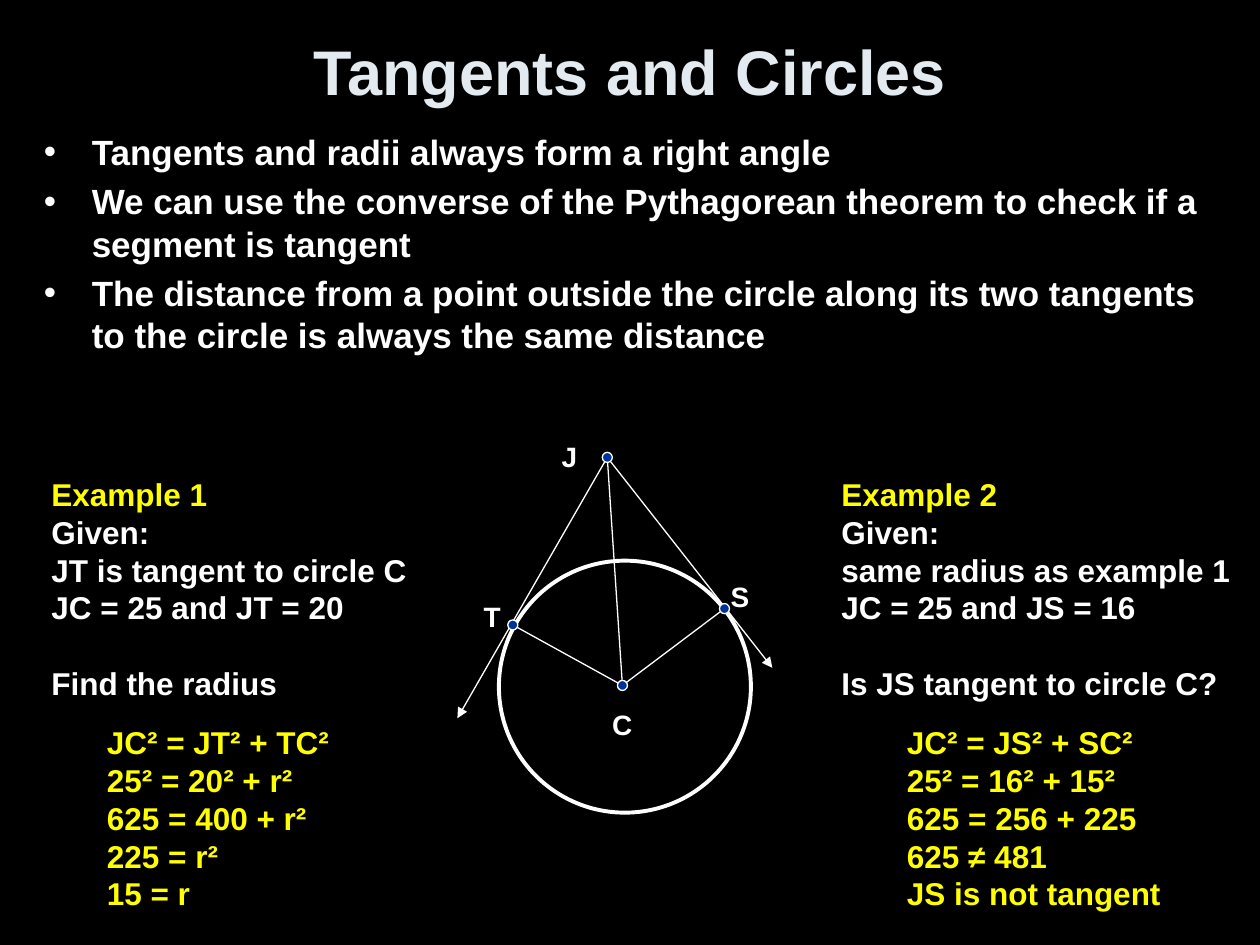
from dataclasses import dataclass

from lxml.etree import SubElement
from pptx import Presentation
from pptx.dml.color import RGBColor
from pptx.enum.shapes import MSO_CONNECTOR, MSO_SHAPE
from pptx.enum.text import MSO_ANCHOR, MSO_AUTO_SIZE, PP_ALIGN
from pptx.oxml.ns import qn
from pptx.util import Inches, Pt


@dataclass(frozen=True)
class Theme:
    font: str = "Arial"
    background: RGBColor = RGBColor(0x00, 0x00, 0x00)
    heading: RGBColor = RGBColor(0xE3, 0xEB, 0xF1)
    text: RGBColor = RGBColor(0xFF, 0xFF, 0xFF)
    accent: RGBColor = RGBColor(0xFF, 0xFF, 0x00)
    point: RGBColor = RGBColor(0x00, 0x33, 0x99)
    title_size: int = 36
    bullet_size: int = 20
    example_size: int = 18
    label_size: int = 16
    thin: float = 0.75
    thick: float = 2.25


class Board:
    def __init__(self, slide, theme):
        self.slide = slide
        self.theme = theme
        self.shapes = slide.shapes
        slide.background.fill.solid()
        slide.background.fill.fore_color.rgb = theme.background

    def frame(self, left, top, width, height, wrap=False):
        box = self.shapes.add_textbox(Inches(left), Inches(top), Inches(width), Inches(height))
        frame = box.text_frame
        frame.word_wrap = wrap
        frame.auto_size = MSO_AUTO_SIZE.NONE if wrap else MSO_AUTO_SIZE.SHAPE_TO_FIT_TEXT
        return frame

    def add_words(self, paragraph, words, size, color):
        run = paragraph.add_run()
        run.text = words
        run.font.name = self.theme.font
        run.font.size = Pt(size)
        run.font.bold = True
        run.font.color.rgb = color

    def title(self, words, *place):
        frame = self.frame(*place, wrap=True)
        frame.vertical_anchor = MSO_ANCHOR.MIDDLE
        frame.paragraphs[0].alignment = PP_ALIGN.CENTER
        self.add_words(frame.paragraphs[0], words, self.theme.title_size, self.theme.heading)

    def bullets(self, statements, *place):
        frame = self.frame(*place, wrap=True)
        for index, statement in enumerate(statements):
            paragraph = frame.add_paragraph() if index else frame.paragraphs[0]
            properties = paragraph._p.get_or_add_pPr()
            properties.set("marL", str(Inches(0.38)))
            properties.set("indent", str(-Inches(0.38)))
            SubElement(properties, qn("a:buFont"), typeface=self.theme.font)
            SubElement(properties, qn("a:buChar"), char="•")
            if index:
                paragraph.space_before = Pt(0.2 * self.theme.bullet_size)
            self.add_words(paragraph, statement, self.theme.bullet_size, self.theme.text)

    def lines(self, lines, colors, *place, size=None):
        size = size or self.theme.example_size
        frame = self.frame(*place)
        for index, (line, color) in enumerate(zip(lines, colors)):
            paragraph = frame.add_paragraph() if index else frame.paragraphs[0]
            self.add_words(paragraph, line, size, color)
        return frame

    def example(self, heading, givens, question, *place):
        lines = [heading, "Given:", *givens, question]
        colors = [self.theme.accent] + [self.theme.text] * (len(lines) - 1)
        frame = self.lines(lines, colors, *place)
        frame.paragraphs[-1].space_before = Pt(1.2 * self.theme.example_size)

    def solution(self, steps, *place):
        self.lines(steps, [self.theme.accent] * len(steps), *place)

    def label(self, letter, *place):
        self.lines([letter], [self.theme.text], *place, size=self.theme.label_size)

    def circle(self, center, diameter, weight, color=None):
        left, top = (Inches(value - diameter / 2) for value in center)
        circle = self.shapes.add_shape(
            MSO_SHAPE.OVAL, left, top, Inches(diameter), Inches(diameter))
        circle.shadow.inherit = False
        if color is None:
            circle.fill.background()
        else:
            circle.fill.solid()
            circle.fill.fore_color.rgb = color
        circle.line.color.rgb = self.theme.text
        circle.line.width = Pt(weight)

    def point(self, center):
        self.circle(center, 0.08, self.theme.thin, self.theme.point)

    def segment(self, start, end, head=None, tail=None):
        segment = self.shapes.add_connector(
            MSO_CONNECTOR.STRAIGHT, *(Inches(value) for value in (*start, *end)))
        segment.line.color.rgb = self.theme.text
        segment.line.width = Pt(self.theme.thin)
        outline = segment.line._get_or_add_ln()
        for tag, kind in (("a:headEnd", head), ("a:tailEnd", tail)):
            if kind:
                SubElement(outline, qn(tag), type=kind)
        SubElement(segment._element.spPr, qn("a:effectLst"))

    def group(self):
        self.shapes = self.slide.shapes.add_group_shape().shapes

    def ungroup(self):
        self.shapes = self.slide.shapes


def draw_tangents(board):
    j, t, s, c = (4.82, 3.63), (4.07, 4.96), (5.75, 4.83), (4.94, 5.44)
    board.group()
    board.circle((4.96, 5.45), 2, board.theme.thick)
    for ray_end in ((6.13, 5.3), (3.63, 5.7)):
        board.segment(j, ray_end, tail="triangle")
    for start, end in ((t, c), (j, c), (c, s)):
        board.segment(start, end, head="oval", tail="oval")
    for vertex in (t, s, j, c):
        board.point(vertex)
    board.label("S", 5.7, 4.55, 0.35, 0.37)
    board.label("T", 3.74, 4.71, 0.34, 0.37)
    board.label("J", 4.36, 3.44, 0.32, 0.37)
    board.label("C", 4.76, 5.57, 0.36, 0.37)
    board.ungroup()


def main():
    deck = Presentation()
    deck.slide_width, deck.slide_height = Inches(10), Inches(7.5)
    board = Board(deck.slides.add_slide(deck.slide_layouts[6]), Theme())

    board.title("Tangents and Circles", 0.5, 0.1, 9, 0.92)
    board.bullets([
        "Tangents and radii always form a right angle",
        "We can use the converse of the Pythagorean theorem to check if a segment is tangent",
        "The distance from a point outside the circle along its two tangents "
        "to the circle is always the same distance",
    ], 0.25, 0.99, 9.49, 2.42)

    example_top, example_height = 3.72, 1.92
    solution_top, solution_height = 5.69, 1.62
    board.example("Example 1", ["JT is tangent to circle C", "JC = 25 and JT = 20"],
                  "Find the radius", 0.31, example_top, 3.05, example_height)
    draw_tangents(board)
    board.example("Example 2", ["same radius as example 1", "JC = 25 and JS = 16"],
                  "Is JS tangent to circle C?", 6.58, example_top, 3.32, example_height)
    board.solution(["JC² = JT² + TC²", "25² = 20² + r²", "625 = 400 + r²", "225 = r²", "15 = r"],
                   0.75, solution_top, 1.98, solution_height)
    board.solution(["JC² = JS² + SC²", "25² = 16² + 15²", "625 = 256 + 225", "625 ≠ 481",
                    "JS is not tangent"], 7.1, solution_top, 2.24, solution_height)

    deck.save("out.pptx")


if __name__ == "__main__":
    main()
